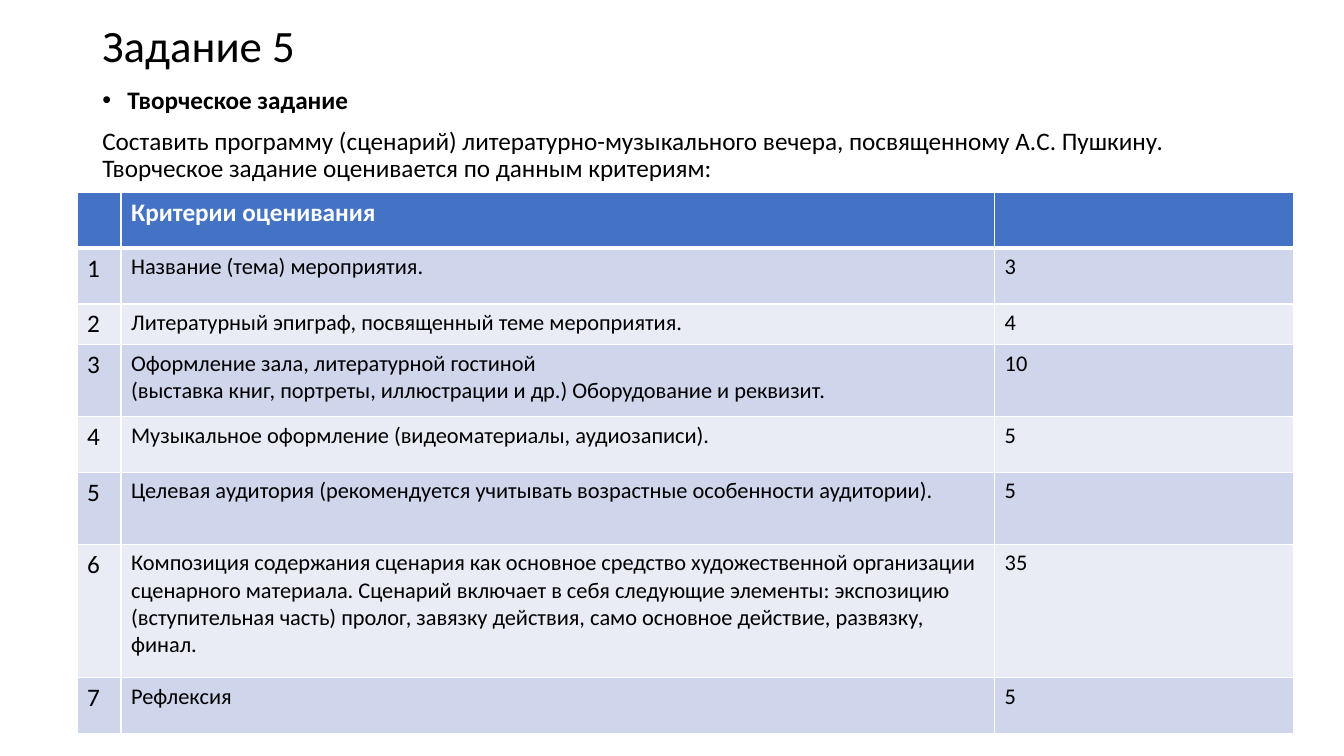
from dataclasses import dataclass

from lxml.etree import SubElement
from pptx import Presentation
from pptx.dml.color import RGBColor
from pptx.enum.text import MSO_ANCHOR, MSO_AUTO_SIZE
from pptx.oxml.ns import qn
from pptx.slide import Slide
from pptx.table import _Cell
from pptx.text.text import TextFrame
from pptx.util import Pt

BLACK = RGBColor(0x00, 0x00, 0x00)
WHITE = RGBColor(0xFF, 0xFF, 0xFF)
BLUE = RGBColor(0x44, 0x72, 0xC4)
BANDS = RGBColor(0xCF, 0xD5, 0xEA), RGBColor(0xE9, 0xEB, 0xF5)
FONT = "Calibri"
COLS = 31.5, 624, 213.5
HEAD = 39.7


@dataclass(frozen=True)
class Item:
    text: str
    score: int
    height: float


ITEMS = [
    Item("Название (тема) мероприятия.", 3, 39.7),
    Item("Литературный эпиграф, посвященный теме мероприятия.", 4, 29.2),
    Item("Оформление зала, литературной гостиной\n"
         "(выставка книг, портреты, иллюстрации и др.) Оборудование и реквизит.", 10, 51.4),
    Item("Музыкальное оформление (видеоматериалы, аудиозаписи).", 5, 39.7),
    Item("Целевая аудитория (рекомендуется учитывать возрастные особенности аудитории).", 5, 51.4),
    Item("Композиция содержания сценария как основное средство художественной организации "
         "сценарного материала. Сценарий включает в себя следующие элементы: экспозицию "
         "(вступительная часть) пролог, завязку действия, само основное действие, развязку, "
         "финал.", 35, 95.3),
    Item("Рефлексия", 5, 39.7),
]


def write(frame: TextFrame, text: str, *, size: float = 18, color: RGBColor = BLACK,
          bold: bool = False, line: float = 1, before: float = 0) -> None:
    frame.word_wrap = True
    frame.text = text
    for para in frame.paragraphs:
        para.line_spacing = line
        para.space_before = Pt(before)
        for run in para.runs:
            font = run.font
            font.name, font.size, font.bold = FONT, Pt(size), bold
            font.color.rgb = color


def paint(cell: _Cell, fill: RGBColor, top: float, base: float) -> None:
    props = cell._tc.get_or_add_tcPr()
    for side, width in (("L", 1), ("R", 1), ("T", top), ("B", base)):
        edge = SubElement(props, qn(f"a:ln{side}"), w=str(Pt(width)))
        tint = SubElement(edge, qn("a:solidFill"))
        SubElement(tint, qn("a:srgbClr"), val=str(WHITE))
    cell.fill.solid()
    cell.fill.fore_color.rgb = fill


def add_title(slide: Slide) -> None:
    title = slide.shapes.title
    title.left, title.top, title.width, title.height = Pt(66), Pt(27.4), Pt(828), Pt(14.4)
    frame = title.text_frame
    write(frame, "Задание 5", size=32, line=0.9)
    frame.auto_size = MSO_AUTO_SIZE.NONE
    frame.vertical_anchor = MSO_ANCHOR.MIDDLE
    frame.paragraphs[0].alignment = 1


def add_task(slide: Slide) -> None:
    frame = slide.shapes.add_textbox(Pt(66), Pt(59), Pt(828), Pt(427.7)).text_frame
    write(frame, "Творческое задание\n"
          "Составить программу (сценарий) литературно-музыкального вечера, "
          "посвященному А.С. Пушкину. Творческое задание оценивается по данным критериям:",
          line=0.9, before=10)
    first = frame.paragraphs[0]
    first.runs[0].font.bold = True
    props = first._p.get_or_add_pPr()
    props.set("marL", str(Pt(18)))
    props.set("indent", str(-Pt(18)))
    SubElement(props, qn("a:buFont"), typeface="Arial")
    SubElement(props, qn("a:buChar"), char="•")


def add_grid(slide: Slide) -> None:
    highs = [HEAD] + [item.height for item in ITEMS]
    grid = slide.shapes.add_table(len(highs), len(COLS), Pt(55), Pt(137.7),
                                  Pt(sum(COLS)), Pt(sum(highs))).table
    for col, width in zip(grid.columns, COLS):
        col.width = Pt(width)
    for row, high in zip(grid.rows, highs):
        row.height = Pt(high)
    for cell in grid.rows[0].cells:
        paint(cell, BLUE, 1, 3)
    write(grid.cell(0, 1).text_frame, "Критерии оценивания", color=WHITE, bold=True)
    for num, item in enumerate(ITEMS, 1):
        texts = (str(num), 18), (item.text, 16), (str(item.score), 16)
        for cell, (text, size) in zip(grid.rows[num].cells, texts):
            paint(cell, BANDS[(num - 1) % 2], 3 if num == 1 else 1, 1)
            write(cell.text_frame, text, size=size)


def main() -> None:
    deck = Presentation()
    deck.slide_width, deck.slide_height = Pt(960), Pt(540)
    slide = deck.slides.add_slide(deck.slide_layouts[5])
    add_title(slide)
    add_task(slide)
    add_grid(slide)
    deck.save("out.pptx")


if __name__ == "__main__":
    main()
